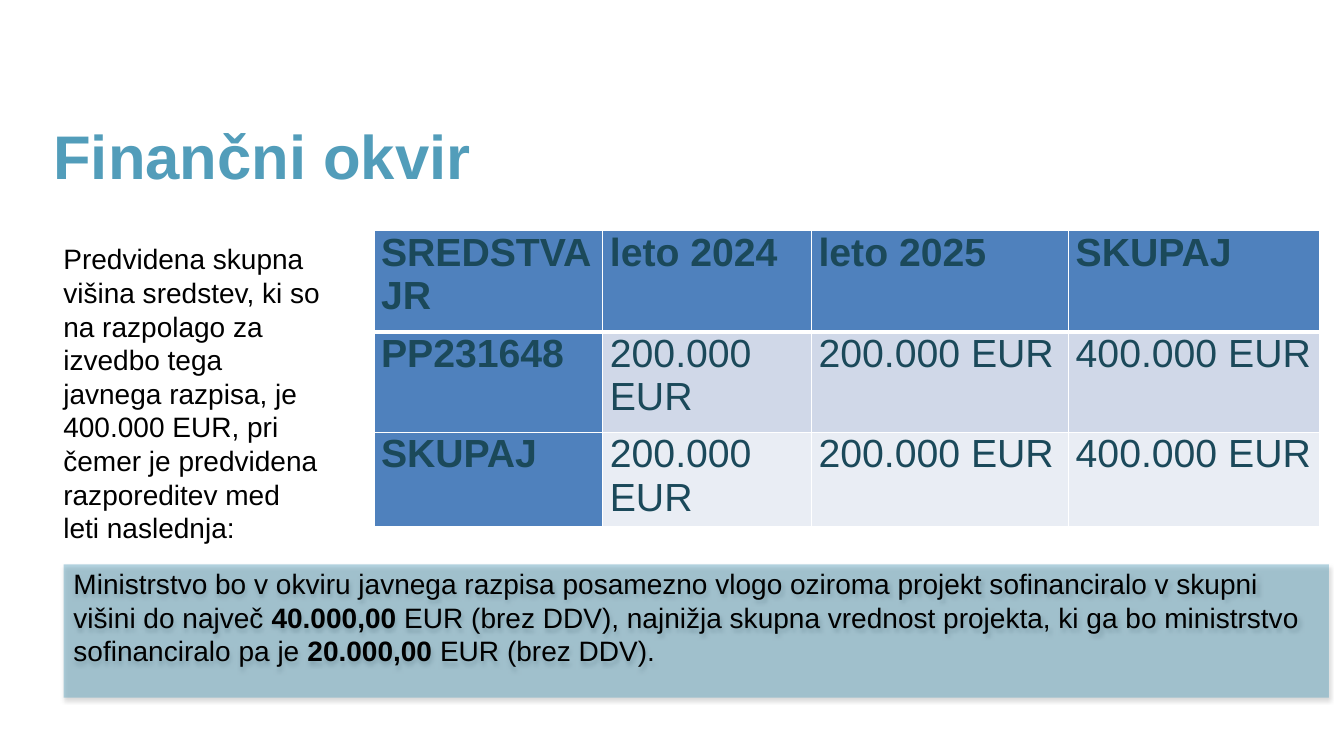
from dataclasses import dataclass

from lxml import etree
from pptx import Presentation
from pptx.dml.color import RGBColor
from pptx.enum.shapes import MSO_SHAPE
from pptx.enum.text import MSO_ANCHOR, PP_ALIGN
from pptx.oxml import parse_xml
from pptx.oxml.ns import qn
from pptx.util import Pt

PROCESS = MSO_SHAPE.FLOWCHART_PROCESS
TOP = MSO_ANCHOR.TOP
BOTTOM = MSO_ANCHOR.BOTTOM
LEFT = PP_ALIGN.LEFT
SCALE = 9144
SPACE = 'xmlns:a="http://schemas.openxmlformats.org/drawingml/2006/main"'


@dataclass(frozen=True)
class Theme:
    face: str = "Arial"
    teal: str = "529DBA"
    deep: str = "1B495A"
    black: str = "000000"
    white: str = "FFFFFF"
    blue: str = "4F81BD"
    bands: tuple = ("D0D8E8", "E9EDF4")
    title: int = 44
    grid: int = 28
    body: int = 20
    lead: int = 24


THEME = Theme()


def px(count):
    return count * SCALE


def assign(target, values):
    for name, value in values.items():
        setattr(target, name, value)


def write(frame, runs, size, color, pads, anchor=TOP, lead=None, after=None):
    left, top, right, bottom = map(px, pads)
    assign(frame, {
        "word_wrap": True, "vertical_anchor": anchor,
        "margin_left": left, "margin_top": top,
        "margin_right": right, "margin_bottom": bottom,
    })
    para = frame.paragraphs[0]
    assign(para, {"alignment": LEFT, "line_spacing": lead, "space_after": after})
    for text, bold in runs:
        run = para.add_run()
        run.text = text
        assign(run.font, {"name": THEME.face, "size": Pt(size), "bold": bold})
        run.font.color.rgb = RGBColor.from_string(color)


def add_title(slide, box):
    frame = slide.shapes.add_textbox(*map(px, box)).text_frame
    write(frame, [("Finančni okvir", True)], THEME.title, THEME.teal,
          (0, 0, 0, 0), BOTTOM)


def add_intro(slide, box):
    frame = slide.shapes.add_textbox(*map(px, box)).text_frame
    text = ("Predvidena skupna višina sredstev, ki so na razpolago za izvedbo "
            "tega javnega razpisa, je 400.000 EUR, pri čemer je predvidena "
            "razporeditev med leti naslednja:")
    write(frame, [(text, False)], THEME.body, THEME.black,
          (10, 5, 10, 5), lead=Pt(THEME.lead), after=Pt(6))


def edge(cell, side, width):
    cell._tc.get_or_add_tcPr().append(parse_xml(
        f'<a:ln{side} {SPACE} w="{Pt(width)}"><a:solidFill>'
        f'<a:srgbClr val="{THEME.white}"/></a:solidFill></a:ln{side}>'))


def add_grid(slide, box):
    sums = ["200.000 EUR", "200.000 EUR", "400.000 EUR"]
    rows = [["SREDSTVA JR", "leto 2024", "leto 2025", "SKUPAJ"],
            ["PP231648", *sums], ["SKUPAJ", *sums]]
    table = slide.shapes.add_table(3, 4, *map(px, box)).table
    for column, width in zip(table.columns, (227, 207, 255, 249)):
        column.width = px(width)
    for row, height in zip(table.rows, (100, 100, 93)):
        row.height = px(height)
    for r, row in enumerate(rows):
        for c, text in enumerate(row):
            cell = table.cell(r, c)
            head = r == 0 or c == 0
            write(cell.text_frame, [(text, head)], THEME.grid, THEME.deep,
                  (0, 0, 0, 0))
            assign(cell, {"margin_left": px(7), "margin_right": px(7),
                          "margin_top": 0, "margin_bottom": 0,
                          "vertical_anchor": TOP})
            for side in "LRTB":
                edge(cell, side, 3 if (r, side) in ((0, "B"), (1, "T")) else 1)
            cell.fill.solid()
            color = THEME.blue if head else THEME.bands[r - 1]
            cell.fill.fore_color.rgb = RGBColor.from_string(color)


def add_note(slide, box):
    note = slide.shapes.add_shape(PROCESS, *map(px, box))
    note.fill.solid()
    note.fill.fore_color.rgb = RGBColor.from_string(THEME.teal)
    note.line.fill.background()
    tint = note.fill._xPr.find(f".//{qn('a:srgbClr')}")
    etree.SubElement(tint, qn("a:alpha"), val="42000")
    note._element.spPr.append(parse_xml(
        f'<a:effectLst {SPACE}><a:outerShdw blurRad="{Pt(3.1)}" '
        f'dist="{Pt(1.8)}" dir="5400000" rotWithShape="0">'
        f'<a:srgbClr val="{THEME.black}"><a:alpha val="35000"/></a:srgbClr>'
        '</a:outerShdw></a:effectLst>'))
    runs = [
        ("Ministrstvo bo v okviru javnega razpisa posamezno vlogo oziroma "
         "projekt sofinanciralo v skupni višini do največ ", False),
        ("40.000,00 ", True),
        ("EUR (brez DDV), najnižja skupna vrednost projekta, ki ga bo "
         "ministrstvo sofinanciralo pa je ", False),
        ("20.000,00", True),
        (" EUR (brez DDV).", False),
    ]
    write(note.text_frame, runs, THEME.body, THEME.black,
          (10, 2, 10, 5), lead=Pt(THEME.lead))


def main():
    deck = Presentation()
    assign(deck, {"slide_width": px(1333), "slide_height": px(750)})
    slide = deck.slides.add_slide(deck.slide_layouts[6])
    add_grid(slide, (371, 229, 938, 293))
    add_note(slide, (63, 560, 1255, 132))
    add_intro(slide, (53, 235, 276, 313))
    add_title(slide, (53, 116, 1270, 74))
    deck.save("out.pptx")


if __name__ == "__main__":
    main()
